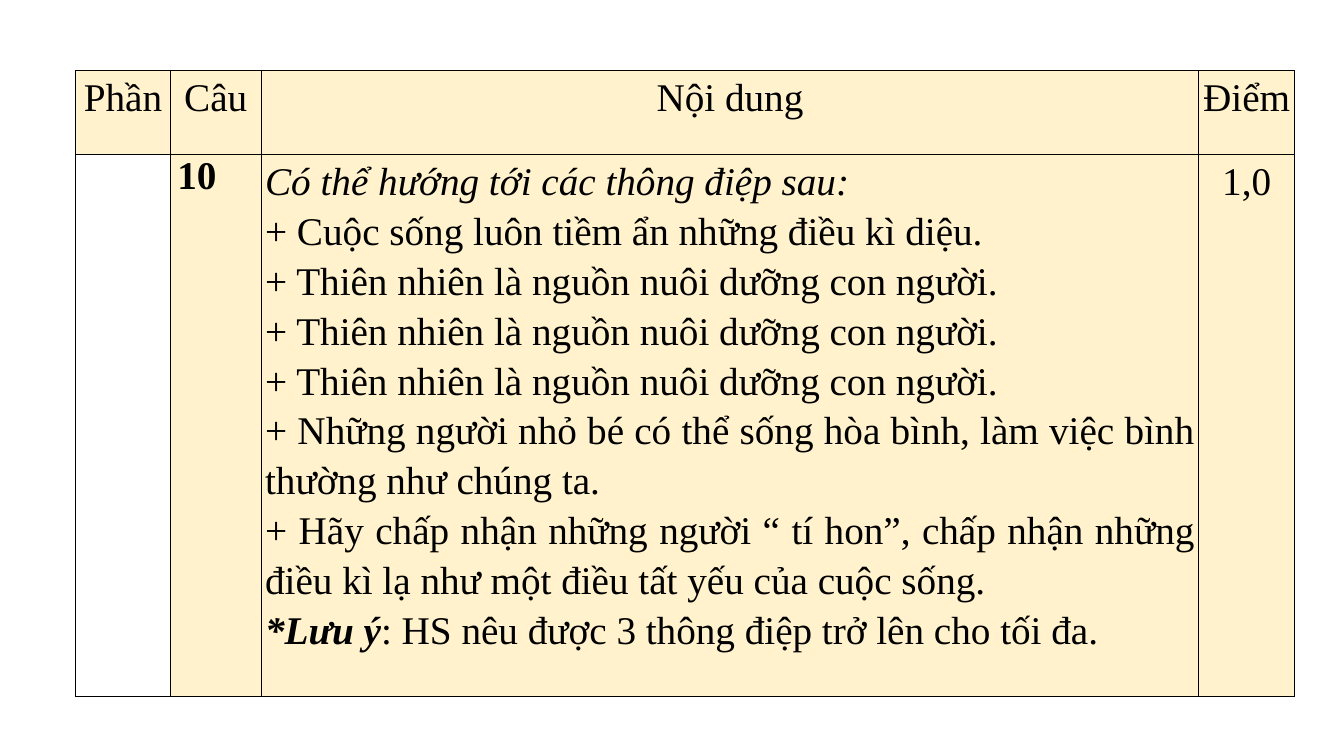
from dataclasses import dataclass

from lxml import etree
from pptx import Presentation
from pptx import util as u
from pptx.dml.color import RGBColor
from pptx.enum import text
from pptx.oxml import ns
from pptx.table import _Cell

HUES = {"ink": "000000", "cream": "FFF2CC"}
FONT = "Times New Roman"
MID, JUST = text.PP_ALIGN.CENTER, text.PP_ALIGN.JUSTIFY
COLS = (0.94, 0.9, 9.3, 0.95)
ROWS = (0.83, 5.38)


@dataclass
class Run:
    words: str
    bold: bool = False
    slant: bool = False


@dataclass
class Entry:
    paras: list[list[Run]]
    align: text.PP_ALIGN = MID
    lead: float = 1.15
    side: float = 0.04
    pad: tuple[float, float] = (0, 0)
    fill: str | None = "cream"


def head(words: str) -> Entry:
    return Entry([[Run(words)]], pad=(2, 1))


IDEAS = [
    "Cuộc sống luôn tiềm ẩn những điều kì diệu.",
    *["Thiên nhiên là nguồn nuôi dưỡng con người."] * 3,
    "Những người nhỏ bé có thể sống hòa bình, làm việc bình thường như chúng ta.",
    "Hãy chấp nhận những người “ tí hon”, chấp nhận những điều kì lạ "
    "như một điều tất yếu của cuộc sống.",
]
BODY = [
    [Run("Có thể hướng tới các thông điệp sau: ", slant=True)],
    *[[Run(f"+ {idea}")] for idea in IDEAS],
    [Run("*Lưu ý", bold=True, slant=True),
     Run(": HS nêu được 3 thông điệp trở lên cho tối đa.")],
]
GRID = [
    [head(words) for words in ("Phần", "Câu", "Nội dung", "Điểm")],
    [
        Entry([], fill=None),
        Entry([[Run("10", bold=True)]], JUST, lead=1, side=0.07),
        Entry(BODY, JUST),
        Entry([[Run("1,0")]]),
    ],
]


def add_rules(cell: _Cell) -> None:
    props = cell._tc.get_or_add_tcPr()
    for edge in ("lnL", "lnR", "lnT", "lnB"):
        line = etree.SubElement(props, ns.qn(f"a:{edge}"), w=str(u.Pt(1)))
        paint = etree.SubElement(line, ns.qn("a:solidFill"))
        etree.SubElement(paint, ns.qn("a:srgbClr"), val=HUES["ink"])


def fill_cell(cell: _Cell, entry: Entry) -> None:
    # Borders, fill and margins
    add_rules(cell)
    if entry.fill:
        cell.fill.solid()
        cell.fill.fore_color.rgb = RGBColor.from_string(HUES[entry.fill])
    else:
        cell.fill.background()
    cell.margin_left = cell.margin_right = u.Inches(entry.side)
    cell.margin_top = cell.margin_bottom = 0

    # Text
    frame = cell.text_frame
    for i, runs in enumerate(entry.paras):
        para = frame.add_paragraph() if i else frame.paragraphs[0]
        para.alignment = entry.align
        para.line_spacing = float(entry.lead)
        para.space_before, para.space_after = map(u.Pt, entry.pad)
        for item in runs:
            run = para.add_run()
            run.text = item.words
            font = run.font
            font.name, font.size = FONT, u.Pt(28)
            font.bold, font.italic = item.bold, item.slant
            font.color.rgb = RGBColor.from_string(HUES["ink"])


def main() -> None:
    deck = Presentation()
    deck.slide_width, deck.slide_height = u.Inches(13.33), u.Inches(7.5)
    slide = deck.slides.add_slide(deck.slide_layouts[6])

    # Marking table
    frame = slide.shapes.add_table(
        len(ROWS), len(COLS), u.Inches(0.75), u.Inches(0.7),
        u.Inches(sum(COLS)), u.Inches(sum(ROWS)))
    table = frame.table
    table.first_row = table.horz_banding = False
    for col, width in zip(table.columns, COLS):
        col.width = u.Inches(width)
    for row, height, entries in zip(table.rows, ROWS, GRID):
        row.height = u.Inches(height)
        for cell, entry in zip(row.cells, entries):
            fill_cell(cell, entry)

    deck.save("out.pptx")


if __name__ == "__main__":
    main()
